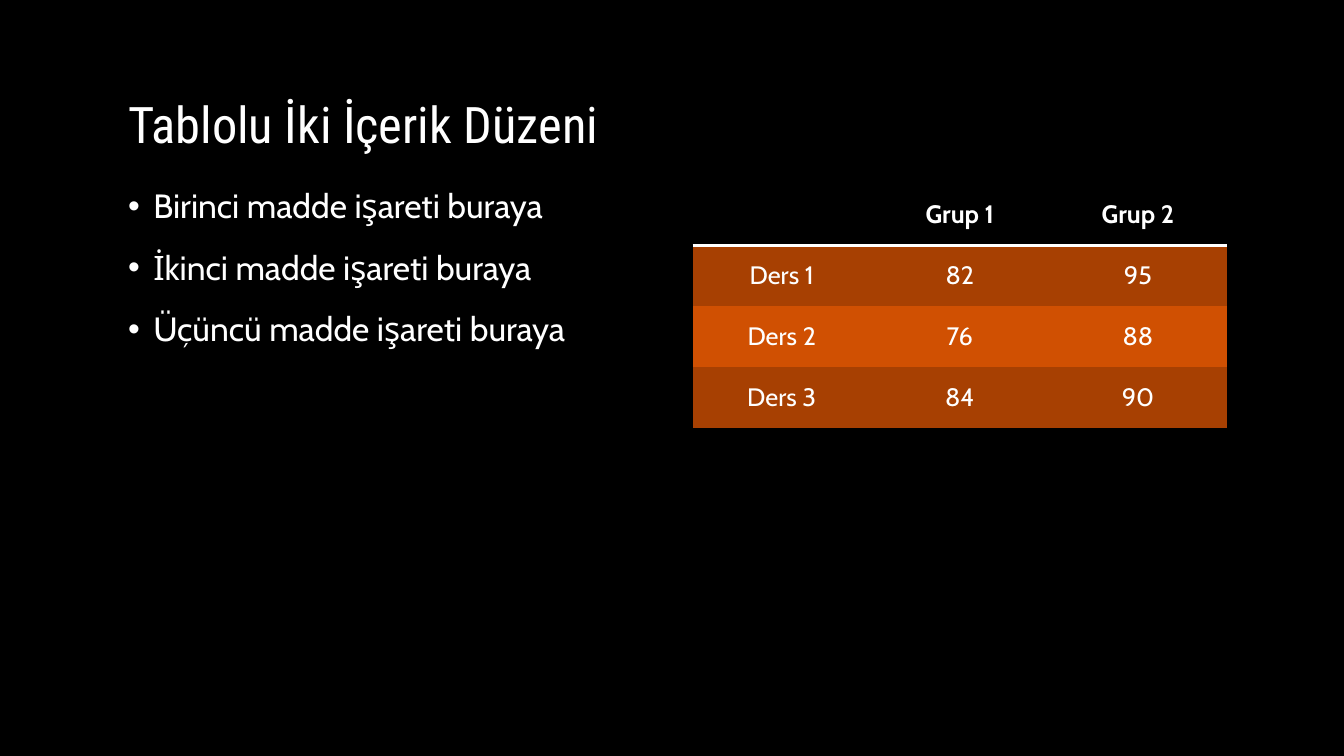
from lxml import etree
from pptx import Presentation
from pptx import util as u
from pptx.dml.color import RGBColor
from pptx.enum import text as t
from pptx.oxml import parse_xml
from pptx.oxml.ns import nsdecls, qn

BLACK = RGBColor(0x00, 0x00, 0x00)
WHITE = RGBColor(0xFF, 0xFF, 0xFF)
DARK = RGBColor(0xA7, 0x40, 0x02)
LIGHT = RGBColor(0xD0, 0x50, 0x02)
PLAIN = "{2D5ABB26-0587-4C30-8999-92F81FD0307C}"

ITEMS = [
    "Birinci madde işareti buraya",
    "İkinci madde işareti buraya",
    "Üçüncü madde işareti buraya",
]
GRADES = [
    ["", "Grup 1", "Grup 2"],
    ["Ders 1", "82", "95"],
    ["Ders 2", "76", "88"],
    ["Ders 3", "84", "90"],
]


def place(shape, left, top, width, height):
    shape.left, shape.top = u.Inches(left), u.Inches(top)
    shape.width, shape.height = u.Inches(width), u.Inches(height)


def add_run(para, words, size, face="Cabin", bold=False):
    run = para.add_run()
    run.text = words
    font = run.font
    font.name, font.size, font.bold = face, u.Pt(size), bold
    font.color.rgb = WHITE


def add_title(slide, words):
    title = slide.shapes.title
    place(title, 1.17, 0.33, 11, 1.25)
    frame = title.text_frame
    frame.auto_size = t.MSO_AUTO_SIZE.NONE
    frame.vertical_anchor = t.MSO_ANCHOR.BOTTOM
    para = frame.paragraphs[0]
    para.alignment = t.PP_ALIGN.LEFT
    para.line_spacing = 0.9
    add_run(para, words, 36, "Roboto Condensed")


def add_list(slide, items):
    body = slide.placeholders[1]
    place(body, 1.17, 1.83, 5.3, 4.75)
    frame = body.text_frame
    frame.auto_size = t.MSO_AUTO_SIZE.NONE
    for i, item in enumerate(items):
        para = frame.add_paragraph() if i else frame.paragraphs[0]
        props = para._p.get_or_add_pPr()
        props.set("marL", str(u.Inches(0.25)))
        props.set("indent", str(u.Inches(-0.25)))
        etree.SubElement(props, qn("a:buFont"), typeface="Arial")
        etree.SubElement(props, qn("a:buChar"), char="•")
        para.line_spacing = 0.9
        para.space_before = u.Pt(18 if i else 0)
        add_run(para, item, 24)


def add_rule(cell):
    line = parse_xml(
        f'<a:lnB {nsdecls("a")} w="{u.Pt(2)}"><a:solidFill>'
        f'<a:srgbClr val="{WHITE}"/></a:solidFill></a:lnB>'
    )
    cell._tc.get_or_add_tcPr().insert(0, line)


def add_grid(slide, rows):
    holder = slide.shapes.add_table(
        len(rows), len(rows[0]),
        u.Inches(6.87), u.Inches(1.83), u.Inches(5.3), u.Inches(2.42),
    )
    table = holder.table
    table._tbl.tblPr.find(qn("a:tableStyleId")).text = PLAIN
    for r, row in enumerate(rows):
        for c, words in enumerate(row):
            cell = table.cell(r, c)
            cell.vertical_anchor = t.MSO_ANCHOR.MIDDLE
            cell.fill.solid()
            cell.fill.fore_color.rgb = (DARK if r % 2 else LIGHT) if r else BLACK
            if r == 0:
                add_rule(cell)
            if words:
                para = cell.text_frame.paragraphs[0]
                para.alignment = t.PP_ALIGN.CENTER
                add_run(para, words, 18, bold=r == 0)


def main():
    deck = Presentation()
    deck.slide_width, deck.slide_height = u.Inches(13.33), u.Inches(7.5)
    slide = deck.slides.add_slide(deck.slide_layouts[1])
    back = slide.background.fill
    back.solid()
    back.fore_color.rgb = BLACK
    add_title(slide, "Tablolu İki İçerik Düzeni")
    add_list(slide, ITEMS)
    add_grid(slide, GRADES)
    deck.save("out.pptx")


if __name__ == "__main__":
    main()
